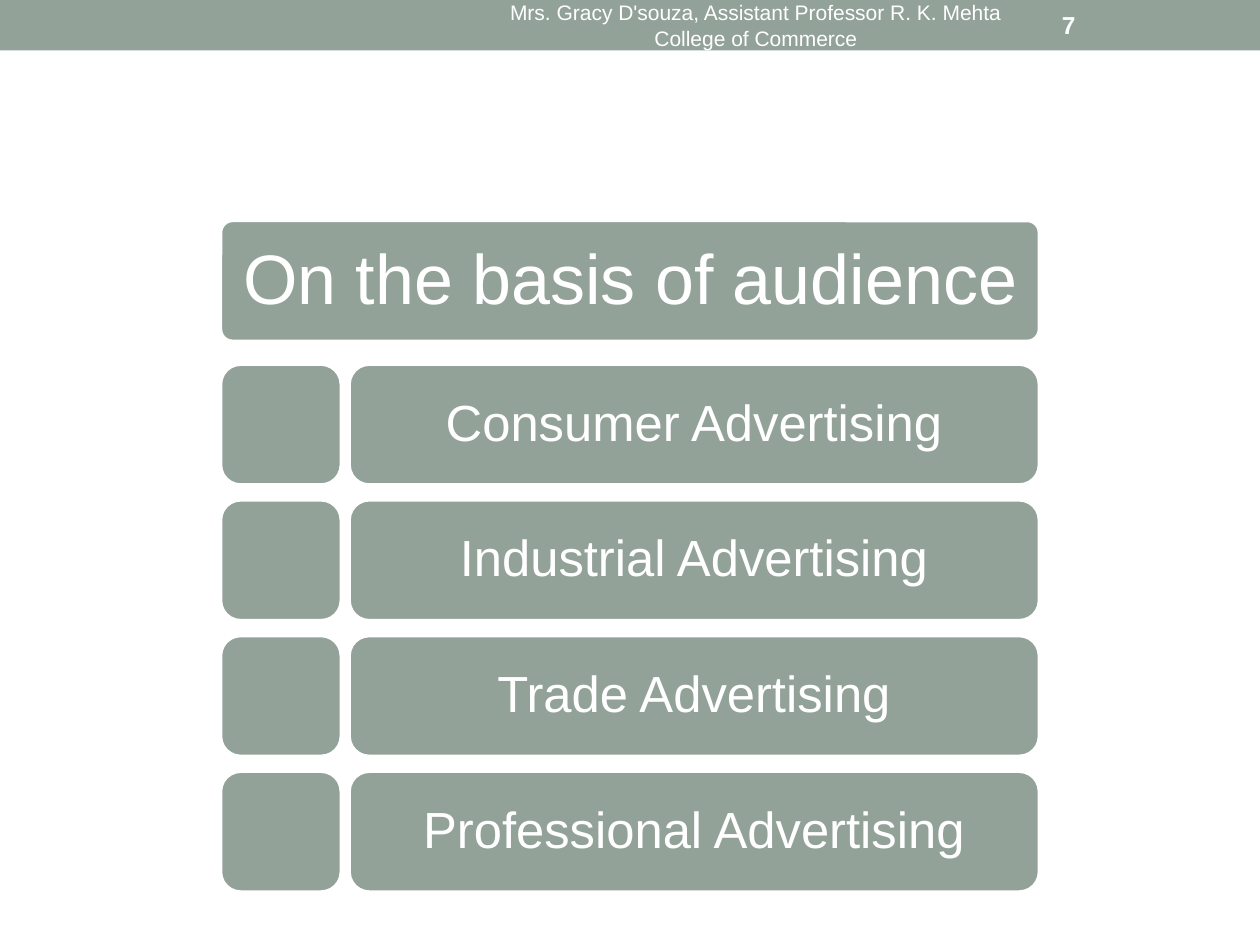
from dataclasses import dataclass

from pptx import Presentation
from pptx.dml.color import RGBColor
from pptx.enum.shapes import MSO_SHAPE
from pptx.enum.text import MSO_ANCHOR, MSO_AUTO_SIZE, PP_ALIGN
from pptx.util import Inches, Pt

RECTANGLE, ROUNDED = MSO_SHAPE.RECTANGLE, MSO_SHAPE.ROUNDED_RECTANGLE
LEFT, CENTER = PP_ALIGN.LEFT, PP_ALIGN.CENTER
MIDDLE, NO_AUTOFIT = MSO_ANCHOR.MIDDLE, MSO_AUTO_SIZE.NONE


@dataclass(frozen=True)
class Theme:
    font: str = "Arial"
    sage: RGBColor = RGBColor(0x93, 0xA2, 0x99)
    white: RGBColor = RGBColor(0xFF, 0xFF, 0xFF)
    heading_size: int = 40
    item_size: int = 29
    footer_size: int = 12
    number_size: int = 14
    outline: float = 2.08


theme = Theme()

prs = Presentation()
prs.slide_width, prs.slide_height = Inches(10), Inches(7.5)
slide = prs.slides.add_slide(prs.slide_layouts[5])
shapes = slide.shapes


def add_box(kind, left, top, width, height, corner=None):
    """Add a sage box; a given corner ratio also brings the white outline."""
    box = shapes.add_shape(kind, Inches(left), Inches(top), Inches(width), Inches(height))
    box.shadow.inherit = False
    box.fill.solid()
    box.fill.fore_color.rgb = theme.sage
    if corner is None:
        box.line.fill.background()
    else:
        box.adjustments[0] = corner
        box.line.color.rgb = theme.white
        box.line.width = Pt(theme.outline)
    return box


def write(holder, text, size, align=CENTER, spacing=1.0, bold=False):
    frame = holder.text_frame
    frame.word_wrap = True
    frame.auto_size = NO_AUTOFIT
    frame.vertical_anchor = MIDDLE
    frame.text = text
    paragraph = frame.paragraphs[0]
    paragraph.alignment = align
    paragraph.line_spacing = spacing
    font = paragraph.runs[0].font
    font.name, font.size, font.bold = theme.font, Pt(size), bold
    font.color.rgb = theme.white


# Header band with footer text and slide number
add_box(RECTANGLE, 0, 0, 10, 0.4)
footer = shapes.add_textbox(Inches(3.75), Inches(0.02), Inches(4.5), Inches(0.36))
write(footer, "Mrs. Gracy D'souza, Assistant Professor R. K. Mehta College of Commerce",
      theme.footer_size)
number = shapes.add_textbox(Inches(8.33), Inches(0.02), Inches(1.17), Inches(0.36))
write(number, "7", theme.number_size, align=LEFT, bold=True)

# Heading: the title sits on its bar, so it moves in front of it
left, total_width, row_height = 1.75, 6.5, 0.96
add_box(ROUNDED, left, 1.75, total_width, row_height, corner=0.1)
heading = shapes.title
shapes._spTree.append(heading._element)
heading.left, heading.top = Inches(1.78), Inches(1.78)
heading.width, heading.height = Inches(6.44), Inches(0.91)
write(heading, "On the basis of audience", theme.heading_size, spacing=0.9)
heading.text_frame.margin_left = heading.text_frame.margin_right = Inches(0.08)
heading.text_frame.margin_top = heading.text_frame.margin_bottom = Inches(0.06)

# One row per audience: a square tile and a label bar
first_top, row_pitch, label_left = 2.89, 1.077, 2.77
audiences = ["Consumer", "Industrial", "Trade", "Professional"]
for row, audience in enumerate(audiences):
    top = first_top + row * row_pitch
    add_box(ROUNDED, left, top, row_height, row_height, corner=0.167)
    label = add_box(ROUNDED, label_left, top, left + total_width - label_left,
                    row_height, corner=0.167)
    write(label, f"{audience} Advertising", theme.item_size, spacing=0.9)

prs.save("out.pptx")
